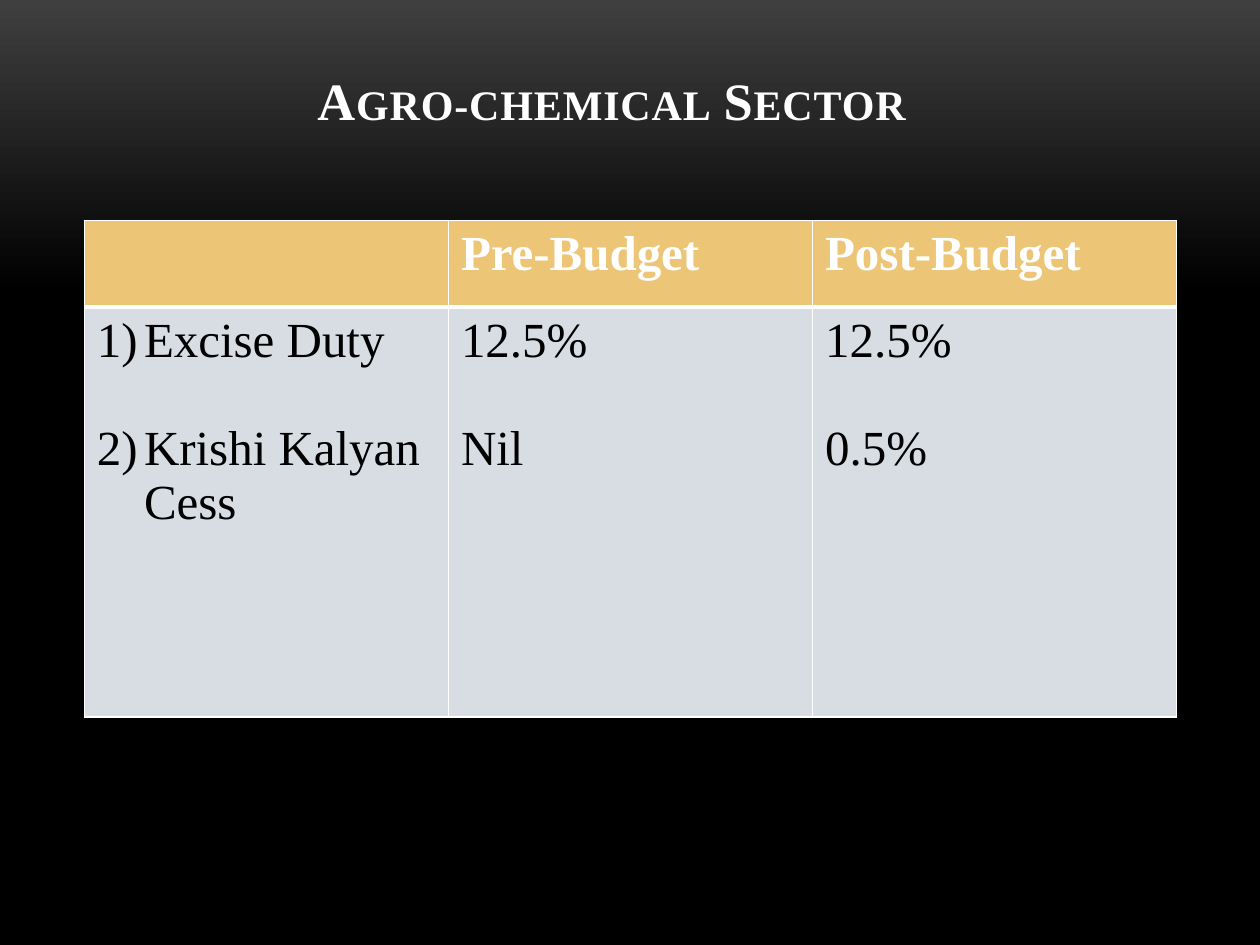
import pptx
import pptx.util
import pptx.dml.color
import pptx.enum.text
import pptx.oxml.ns
import lxml.etree as etree

Cm, Pt = pptx.util.Cm, pptx.util.Pt
HUES = {"glow": "3F3F3F", "black": "000000", "white": "FFFFFF",
        "gold": "ECC577", "mist": "D8DDE3"}
FONT = "Times New Roman"
LEFT, WIDE = Cm(1.7), Cm(22.02)
ROWS = [
    [[], ["Pre-Budget"], ["Post-Budget"]],
    [["Excise Duty", "Krishi Kalyan Cess"], ["12.5%", "Nil"], ["12.5%", "0.5%"]],
]


def shade(name):
    return pptx.dml.color.RGBColor.from_string(HUES[name])


def add_tag(node, tag, **attrs):
    return etree.SubElement(node, pptx.oxml.ns.qn(tag), **attrs)


class Deck:
    """Holds the text style and the current slide."""

    def __init__(self, slide, font):
        self.slide, self.font = slide, font

    def back(self):
        fill = self.slide.background.fill
        fill.gradient()
        fill.gradient_angle = 270
        for stop, spot, hue in zip(fill.gradient_stops, (0, 0.31), ("glow", "black")):
            stop.position = spot
            stop.color.rgb = shade(hue)

    def run(self, para, text, size, hue, bold):
        run = para.add_run()
        run.text = text
        run.font.name, run.font.size, run.font.bold = self.font, Pt(size), bold
        run.font.color.rgb = shade(hue)
        return run

    def title(self, text):
        box = self.slide.shapes.add_textbox(LEFT, Cm(0.76), WIDE, Cm(3.18))
        frame = box.text_frame
        frame.word_wrap = True
        frame.vertical_anchor = pptx.enum.text.MSO_ANCHOR.BOTTOM
        frame.margin_bottom, frame.margin_right = Cm(1.3), Cm(0.65)
        para = frame.paragraphs[0]
        para.alignment = pptx.enum.text.PP_ALIGN.CENTER
        props = self.run(para, text, 30, "white", True)._r.get_or_add_rPr()
        props.set("cap", "small")
        props.set("spc", "50")

    def edge(self, cell, sides):
        """Draw white cell borders; sides maps L, R, T, B to points."""
        props = cell._tc.get_or_add_tcPr()
        for side, width in sides.items():
            line = add_tag(props, f"a:ln{side}", w=str(Pt(width)))
            fill = add_tag(line, "a:solidFill")
            add_tag(fill, "a:srgbClr", val=HUES["white"])

    def count(self, para):
        """Number a paragraph 1), 2) with a hanging indent."""
        props = para._p.get_or_add_pPr()
        props.set("marL", str(Cm(0.95)))
        props.set("indent", str(-Cm(0.95)))
        add_tag(props, "a:buFont", typeface=self.font)
        add_tag(props, "a:buAutoNum", type="arabicParenR")

    def cell(self, cell, lines, head, count):
        self.edge(cell, {"L": 1, "R": 1, "T": 1 if head else 3, "B": 3 if head else 1})
        cell.fill.solid()
        cell.fill.fore_color.rgb = shade("gold" if head else "mist")
        for i, text in enumerate(lines):
            para = cell.text_frame.paragraphs[0] if i == 0 else cell.text_frame.add_paragraph()
            if i:
                para.space_before = Pt(31)
            if count:
                self.count(para)
            self.run(para, text, 28, "white" if head else "black", head)

    def table(self, rows, highs):
        size = len(rows), len(rows[0])
        grid = self.slide.shapes.add_table(*size, LEFT, Cm(4.44), WIDE, sum(highs)).table
        for r, row in enumerate(rows):
            grid.rows[r].height = highs[r]
            for c, lines in enumerate(row):
                self.cell(grid.cell(r, c), lines, r == 0, r > 0 and c == 0)


def main():
    show = pptx.Presentation()
    show.slide_width, show.slide_height = Cm(25.4), Cm(19.05)
    deck = Deck(show.slides.add_slide(show.slide_layouts[6]), FONT)
    deck.back()
    deck.title("Agro-chemical Sector")
    deck.table(ROWS, [Cm(1.75), Cm(8.26)])
    show.save("out.pptx")


if __name__ == "__main__":
    main()
